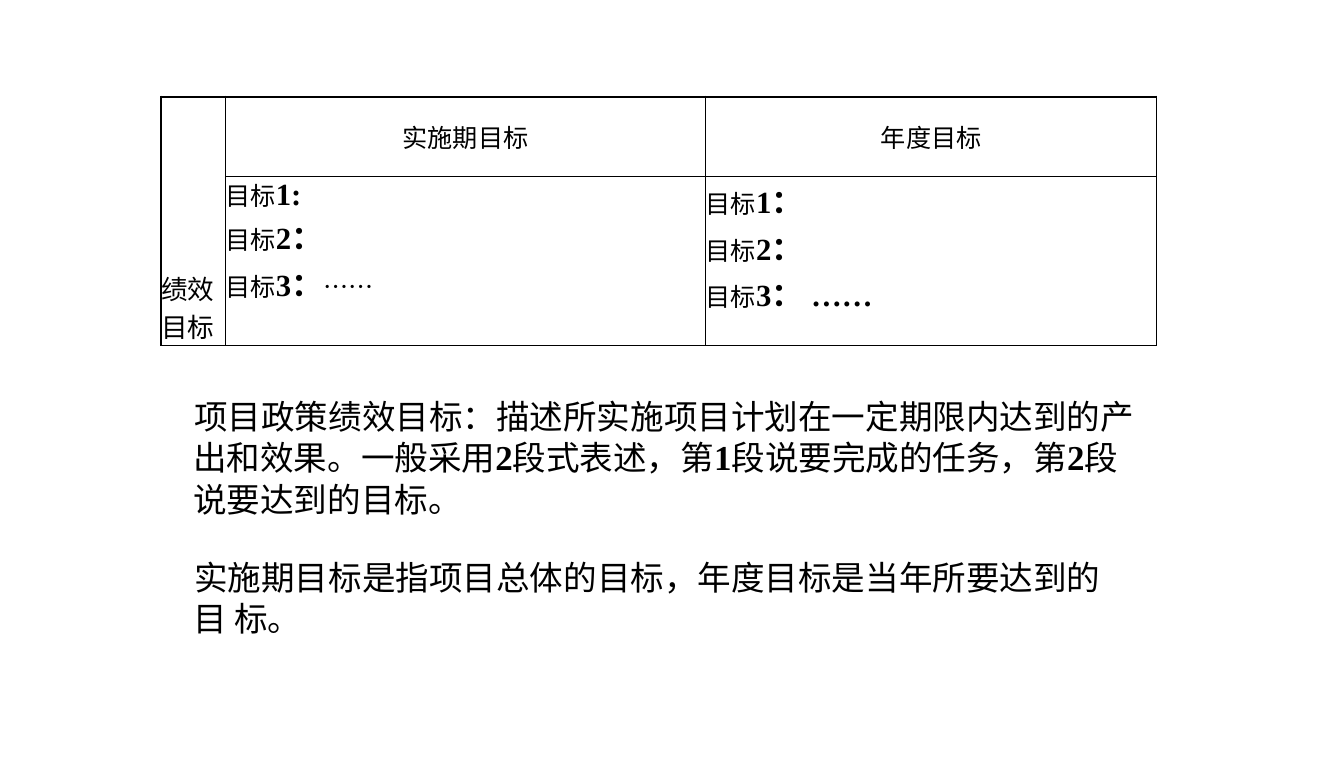
from lxml.etree import SubElement
from pptx import Presentation
from pptx.dml.color import RGBColor
from pptx.enum.text import MSO_ANCHOR as Anchor, PP_ALIGN as Align
from pptx.oxml.ns import qn
from pptx.util import Inches, Pt

SANS, SANS_TC, SERIF = "Noto Sans CJK SC", "Noto Sans CJK TC", "Times New Roman"
BLACK, WHITE = "000000", "FFFFFF"

SIDE = (SANS_TC, 19, False)
LABEL = (SANS, 18, False)
NUMBER = (SERIF, 22, True)
COLON = (SANS, 23, True)
BODY = (SANS, 24, False)
DIGIT = (SERIF, 25, True)


def goal(number, *rest):
    return [("目标", LABEL), (number, NUMBER), *rest]


full_colon = ("：", COLON)
side_heading = [[("绩效目标", SIDE)]]
column_headings = [[[("实施期目标", LABEL)]], [[("年度目标", LABEL)]]]
column_goals = [
    [goal("1:"), goal("2", full_colon), goal("3", full_colon, ("……", LABEL))],
    [goal("1", full_colon), goal("2", full_colon),
     goal("3", full_colon, (" ……", NUMBER))],
]
explanations = [
    dict(box=(1.92, 3.93, 9.36, 1.17), spacing=29.4, after=0, paragraphs=[[
        ("项目政策绩效目标：描述所实施项目计划在一定期限内达到的产 出和效果。一般采用", BODY),
        ("2", DIGIT), ("段式表述，第", BODY),
        ("1", DIGIT), ("段说要完成的任务，第", BODY),
        ("2", DIGIT), ("段 说要达到的目标。", BODY)]]),
    dict(box=(1.92, 5.53, 9.32, 1.79), spacing=29.1, after=31.5, paragraphs=[[
        ("实施期目标是指项目总体的目标，年度目标是当年所要达到的目 标。", BODY)]]),
]
column_widths = [0.64, 4.77, 4.48]
row_heights = [0.79, 1.68]


def color(hex_value):
    return RGBColor.from_string(hex_value)


def write(frame, paragraphs, align=Align.LEFT, spacing=None, after=0, indent=0):
    frame.word_wrap = True
    for index, runs in enumerate(paragraphs):
        paragraph = frame.paragraphs[0] if index == 0 else frame.add_paragraph()
        paragraph.alignment = align
        paragraph.space_after = Pt(after)
        if spacing:
            paragraph.line_spacing = Pt(spacing)
        if indent:
            paragraph._p.get_or_add_pPr().set("indent", str(Inches(indent)))
        for text, (face, size, bold) in runs:
            run = paragraph.add_run()
            run.text = text
            run.font.name = face
            run.font.size = Pt(size)
            run.font.bold = bold
            run.font.color.rgb = color(BLACK)
            SubElement(run._r.get_or_add_rPr(), qn("a:ea"), typeface=face)


def clear_margins(holder):
    holder.margin_left = holder.margin_right = 0
    holder.margin_top = holder.margin_bottom = 0


def add_borders(cell, widths):
    properties = cell._tc.get_or_add_tcPr()
    for side, width in widths.items():
        line = SubElement(properties, qn(f"a:ln{side}"), w=str(Pt(width)))
        fill = SubElement(line, qn("a:solidFill"))
        SubElement(fill, qn("a:srgbClr"), val=BLACK)


def add_goal_table(slide):
    table = slide.shapes.add_table(
        len(row_heights), len(column_widths), Inches(1.6), Inches(0.96),
        Inches(sum(column_widths)), Inches(sum(row_heights))).table
    table.first_row = table.horz_banding = False
    for column, width in zip(table.columns, column_widths):
        column.width = Inches(width)
    for row, height in zip(table.rows, row_heights):
        row.height = Inches(height)
    for row in range(len(row_heights)):
        for column in range(len(column_widths)):
            cell = table.cell(row, column)
            clear_margins(cell)
            add_borders(cell, {"L": 0.75 if column else 1.5, "R": 0.75,
                               "T": 0.75 if row else 1.5, "B": 0.75})
            cell.fill.background()

    side = table.cell(0, 0)
    side.merge(table.cell(1, 0))
    side.vertical_anchor = Anchor.BOTTOM
    write(side.text_frame, side_heading)
    for column, (heading, goals) in enumerate(zip(column_headings, column_goals), 1):
        top = table.cell(0, column)
        top.vertical_anchor = Anchor.MIDDLE
        write(top.text_frame, heading, align=Align.CENTER)
        write(table.cell(1, column).text_frame, goals)


def add_explanation(slide, box, paragraphs, spacing, after):
    explanation = slide.shapes.add_textbox(*map(Inches, box))
    explanation.fill.solid()
    explanation.fill.fore_color.rgb = color(WHITE)
    clear_margins(explanation.text_frame)
    write(explanation.text_frame, paragraphs, spacing=spacing, after=after, indent=0.01)


def main():
    deck = Presentation()
    deck.slide_width, deck.slide_height = Inches(13.35), Inches(7.53)
    slide = deck.slides.add_slide(deck.slide_layouts[6])
    add_goal_table(slide)
    for explanation in explanations:
        add_explanation(slide, **explanation)
    deck.save("out.pptx")


if __name__ == "__main__":
    main()
